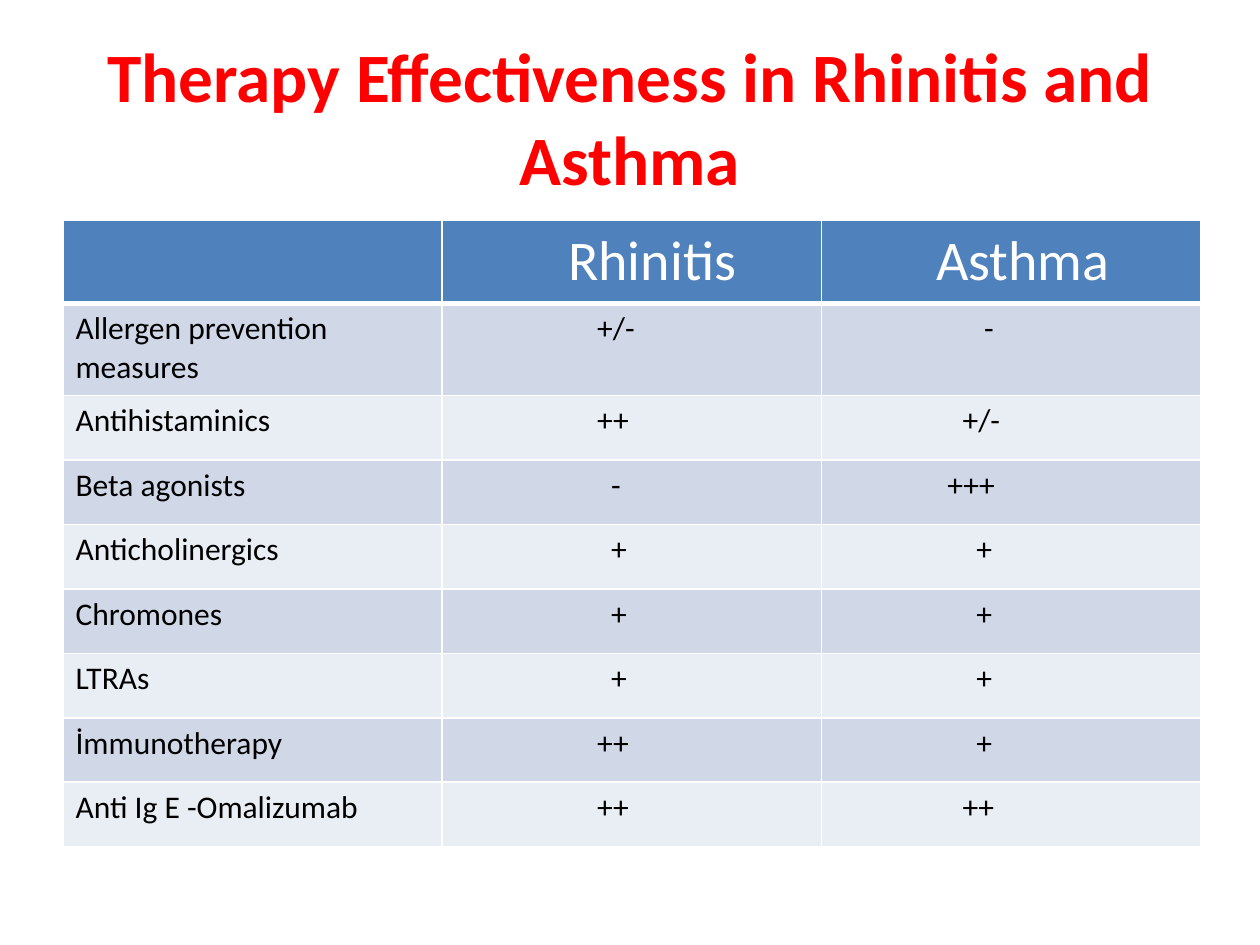
import pptx
import pptx.dml.color
import pptx.enum.text
import pptx.oxml.ns
import pptx.util
from lxml import etree

RED = pptx.dml.color.RGBColor(0xFF, 0x00, 0x00)
WHITE = pptx.dml.color.RGBColor(0xFF, 0xFF, 0xFF)
BLACK = pptx.dml.color.RGBColor(0x00, 0x00, 0x00)
BLUE = pptx.dml.color.RGBColor(0x4F, 0x81, 0xBD)
BANDS = (pptx.dml.color.RGBColor(0xD0, 0xD8, 0xE8),
         pptx.dml.color.RGBColor(0xE9, 0xED, 0xF4))
FONT = "Calibri"

TITLE_BOX = (0.5, 0.3, 9, 1.25)
TABLE_BOX = (0.5, 1.75, 9.03, 4.97)
HEADER_HEIGHT, FIRST_HEIGHT = 0.66, 0.73

# Each cell is its text and its left indent in inches.
HEADER = (("", 0), ("Rhinitis", 0.9), ("Asthma", 0.81))
THERAPIES = (
    (("Allergen prevention measures", 0), ("+/-", 1.13), ("-", 1.19)),
    (("Antihistaminics", 0), ("++", 1.13), ("+/-", 1.02)),
    (("Beta agonists", 0), ("-", 1.24), ("+++", 0.9)),
    (("Anticholinergics", 0), ("+", 1.24), ("+", 1.13)),
    (("Chromones", 0), ("+", 1.24), ("+", 1.13)),
    (("LTRAs", 0), ("+", 1.24), ("+", 1.13)),
    (("İmmunotherapy", 0), ("++", 1.13), ("+", 1.13)),
    (("Anti Ig E -Omalizumab", 0), ("++", 1.13), ("++", 1.02)),
)


def inches(box):
    return [pptx.util.Inches(length) for length in box]


def set_font(para, size, color, bold=False):
    para.font.name = FONT
    para.font.size = pptx.util.Pt(size)
    para.font.color.rgb = color
    para.font.bold = bold


def set_borders(cell, bottom):
    """Draw white cell borders, 1 pt wide except for the bottom one."""
    properties = cell._tc.get_or_add_tcPr()
    for side, width in (("L", 1), ("R", 1), ("T", 1), ("B", bottom)):
        line = etree.SubElement(properties, pptx.oxml.ns.qn("a:ln" + side),
                                w=str(pptx.util.Pt(width)))
        fill = etree.SubElement(line, pptx.oxml.ns.qn("a:solidFill"))
        etree.SubElement(fill, pptx.oxml.ns.qn("a:srgbClr"), val=str(WHITE))


def fill_row(row, entries, fill, size, color, bottom=1):
    for cell, (text, indent) in zip(row.cells, entries):
        set_borders(cell, bottom)
        cell.fill.solid()
        cell.fill.fore_color.rgb = fill
        cell.text = text
        para = cell.text_frame.paragraphs[0]
        set_font(para, size, color)
        if indent:
            para._p.get_or_add_pPr().set("marL", str(pptx.util.Inches(indent)))


def place_title(page, box):
    title = page.shapes.title
    title.left, title.top, title.width, title.height = inches(box)
    title.text_frame.text = "Therapy Effectiveness in Rhinitis and Asthma"
    title.text_frame.vertical_anchor = pptx.enum.text.MSO_ANCHOR.MIDDLE
    para = title.text_frame.paragraphs[0]
    para.alignment = pptx.enum.text.PP_ALIGN.CENTER
    set_font(para, 39.6, RED, bold=True)


def place_table(page, box):
    table = page.shapes.add_table(
        len(THERAPIES) + 1, len(HEADER), *inches(box)).table
    header, first, *others = table.rows
    header.height = pptx.util.Inches(HEADER_HEIGHT)
    first.height = pptx.util.Inches(FIRST_HEIGHT)
    rest = (box[3] - HEADER_HEIGHT - FIRST_HEIGHT) / len(others)
    for row in others:
        row.height = pptx.util.Inches(rest)

    fill_row(header, HEADER, BLUE, 32, WHITE, bottom=3)
    for index, (row, entries) in enumerate(zip((first, *others), THERAPIES)):
        fill_row(row, entries, BANDS[index % 2], 18, BLACK)


def main():
    deck = pptx.Presentation()
    deck.slide_width, deck.slide_height = inches((10, 7.5))
    page = deck.slides.add_slide(deck.slide_layouts.get_by_name("Title Only"))
    place_title(page, TITLE_BOX)
    place_table(page, TABLE_BOX)
    deck.save("out.pptx")


if __name__ == "__main__":
    main()
